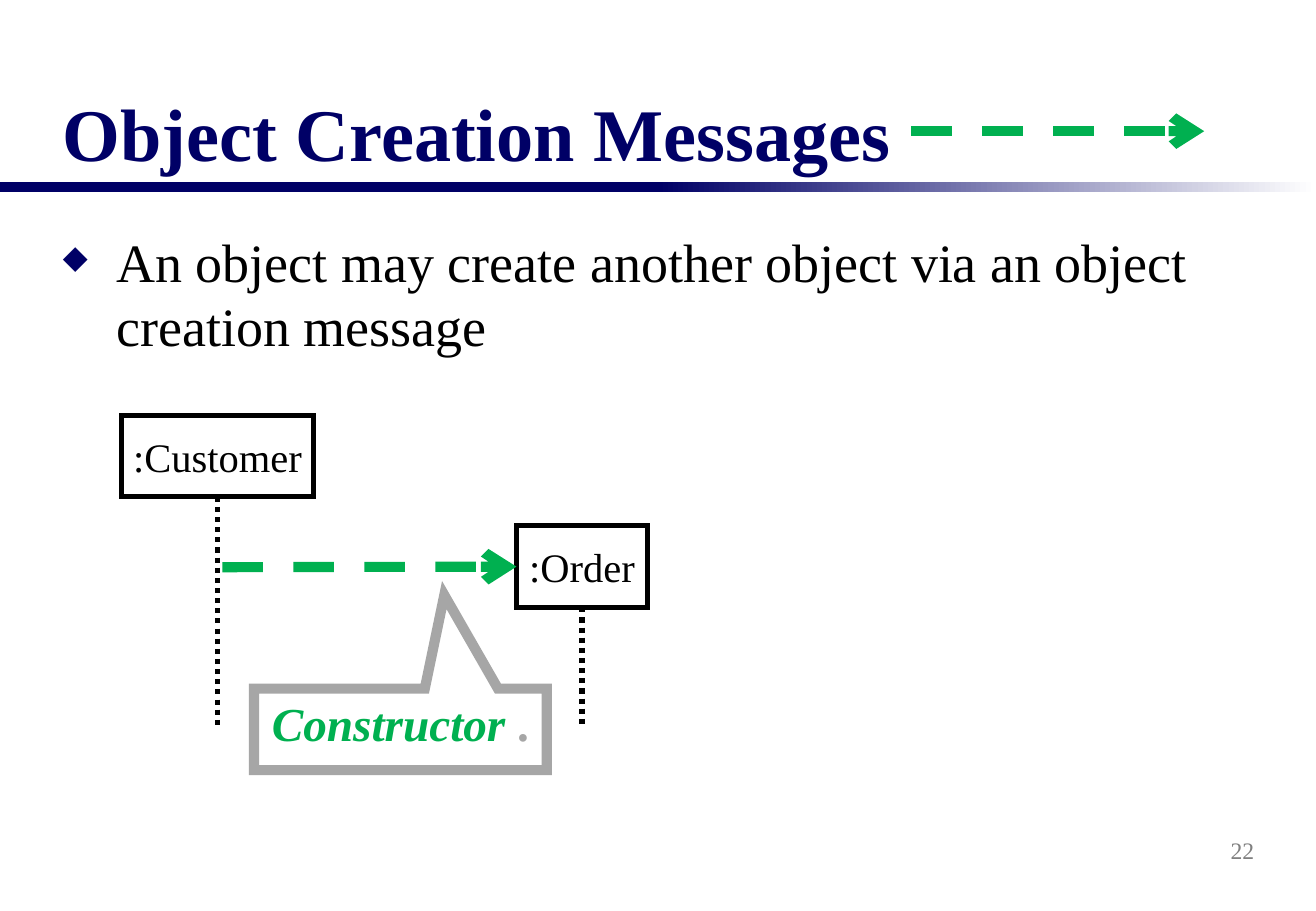
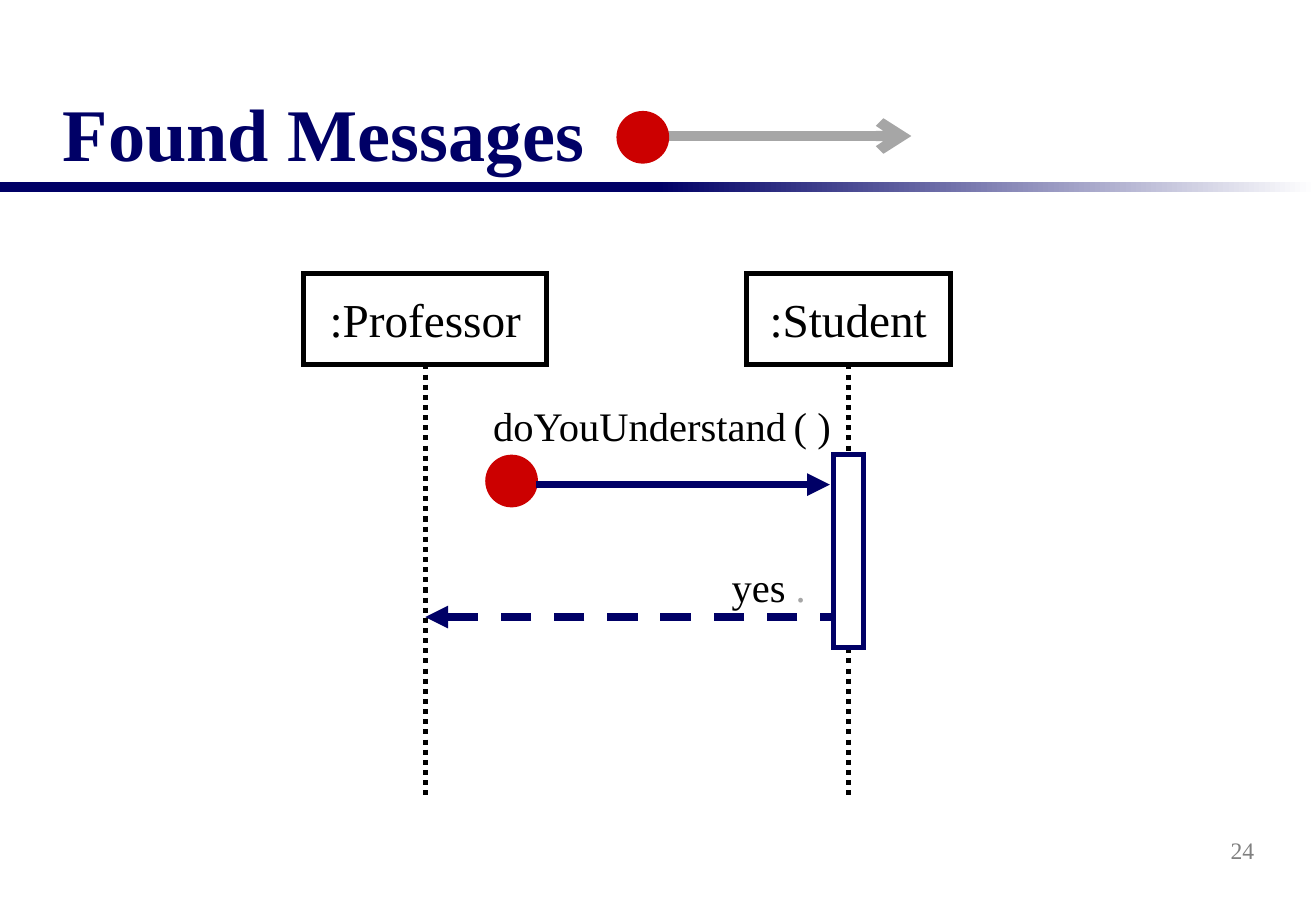
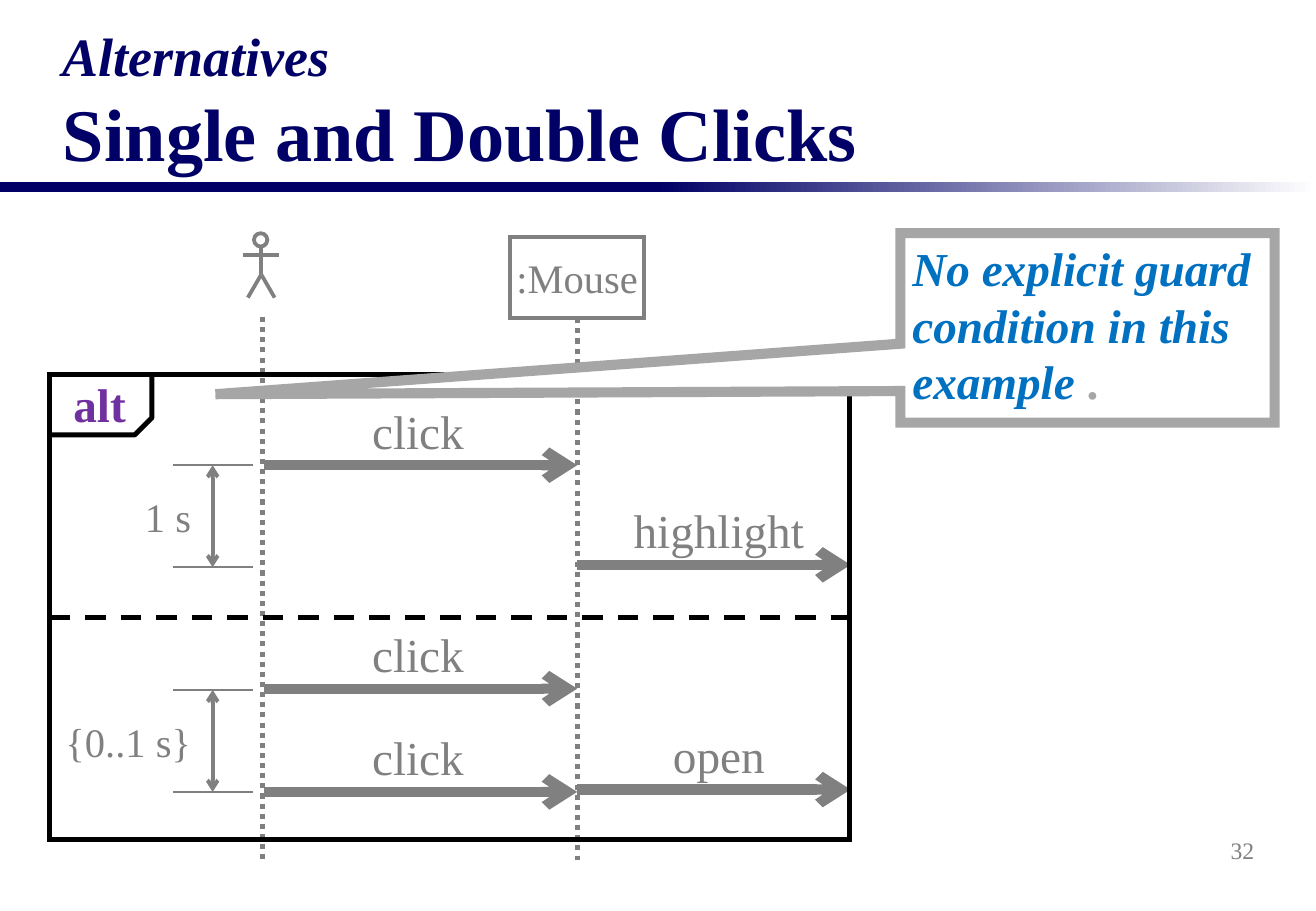
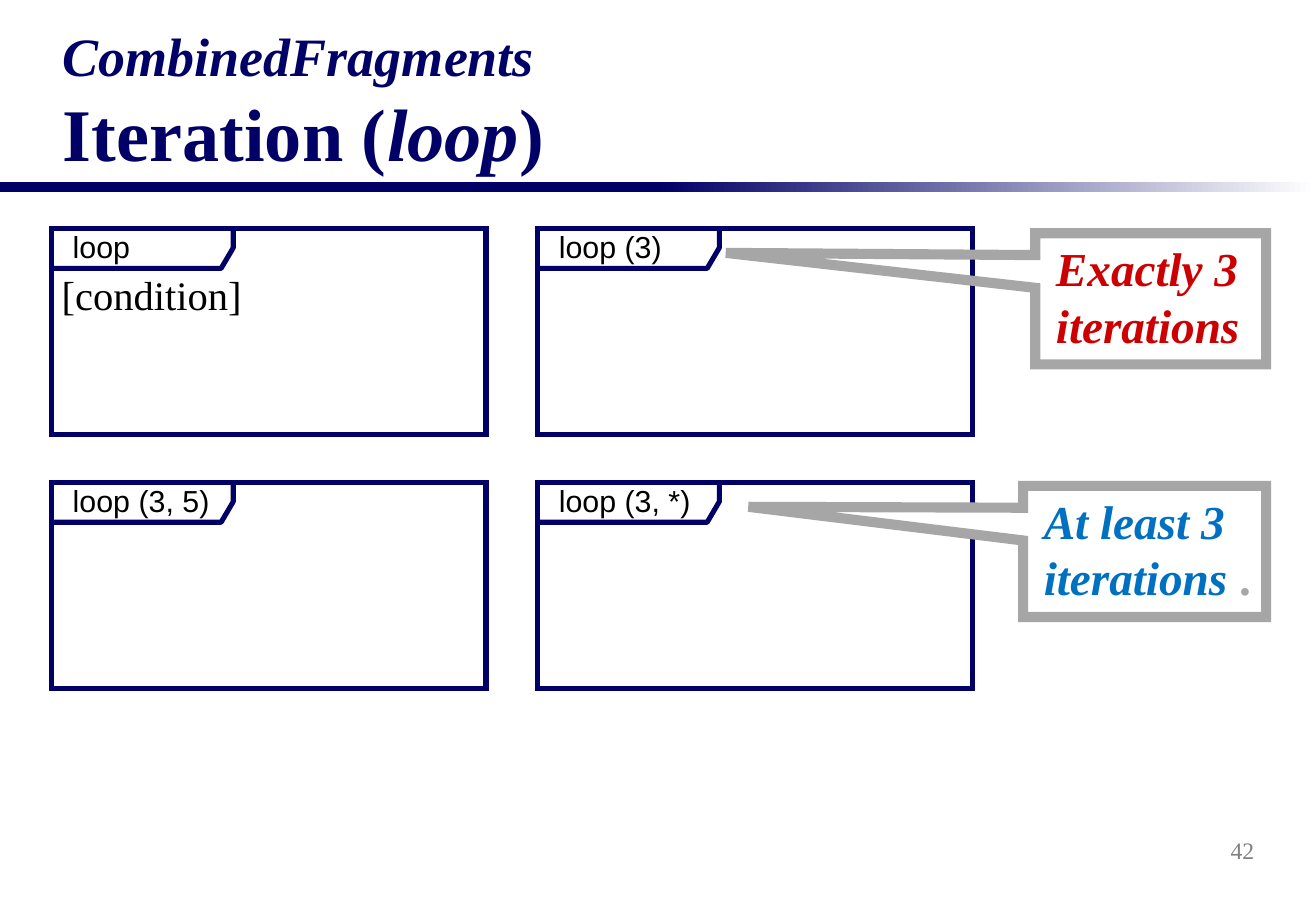
from lxml import etree
from pptx import Presentation
from pptx import util as u
from pptx.dml.color import RGBColor
from pptx.enum import dml, shapes, text
from pptx.oxml.ns import qn

PX = 9144
COLORS = {
    "navy": "000066",
    "black": "000000",
    "white": "FFFFFF",
    "gray": "808080",
    "silver": "A6A6A6",
    "green": "00B050",
    "red": "CC0000",
    "blue": "0070C0",
    "purple": "7030A0",
}
DASHES = {"dash": dml.MSO_LINE.DASH, "dots": dml.MSO_LINE.ROUND_DOT}
ALIGNS = {
    "left": text.PP_ALIGN.LEFT,
    "center": text.PP_ALIGN.CENTER,
    "right": text.PP_ALIGN.RIGHT,
}
ANCHORS = {
    "top": text.MSO_ANCHOR.TOP,
    "middle": text.MSO_ANCHOR.MIDDLE,
    "bottom": text.MSO_ANCHOR.BOTTOM,
}
BASE = {"name": "Times New Roman", "size": 24, "color": "black", "bold": False, "italic": False}
TITLE = {"size": 44, "color": "navy", "bold": True}
KICKER = {"size": 32, "italic": True}
REMARK = {"size": 28, "bold": True, "italic": True}
GRAY_DOT = (".", {"color": "silver", "italic": False})


def emu(*lengths):
    return [u.Emu(length * PX) for length in lengths]


def rgb(color):
    return RGBColor.from_string(COLORS[color])


def assign(target, values):
    for name, value in values.items():
        setattr(target, name, value)


def write(shape, runs, style=None, align="left", anchor="top", wrap=True, left_inset=10):
    frame = shape.text_frame
    inset, edge = emu(10, 5)
    assign(frame, {
        "word_wrap": wrap,
        "vertical_anchor": ANCHORS[anchor],
        "margin_left": emu(left_inset)[0],
        "margin_right": inset,
        "margin_top": edge,
        "margin_bottom": edge,
    })
    paragraph = frame.paragraphs[0]
    paragraph.alignment = ALIGNS[align]
    for content, changes in runs:
        if content == "\n":
            paragraph.add_line_break()
            continue
        run = paragraph.add_run()
        run.text = content
        values = {**BASE, **(style or {}), **changes}
        run.font.color.rgb = rgb(values.pop("color"))
        values["size"] = u.Pt(values["size"])
        assign(run.font, values)
    return paragraph


def label(slide, box, content, style=None, **layout):
    runs = [(content, {})] if isinstance(content, str) else content
    return write(slide.shapes.add_textbox(*emu(*box)), runs, style, **layout)


def outline(shape, fill=None, ink=None, weight=3, miter=True):
    shape.shadow.inherit = False
    if fill:
        shape.fill.solid()
        shape.fill.fore_color.rgb = rgb(fill)
    else:
        shape.fill.background()
    if not ink:
        shape.line.fill.background()
        return shape
    shape.line.color.rgb = rgb(ink)
    shape.line.width = u.Pt(weight)
    if miter:
        ln = shape._element.spPr.find(qn("a:ln"))
        etree.SubElement(ln, qn("a:miter")).set("lim", "800000")
    return shape


def draw(slide, kind, box, **look):
    return outline(slide.shapes.add_shape(kind, *emu(*box)), **look)


def rectangle(slide, box, **look):
    return draw(slide, shapes.MSO_SHAPE.RECTANGLE, box, **look)


def stroke(slide, start, end, ink, weight, dash=None, head=None, tail=None):
    connector = slide.shapes.add_connector(shapes.MSO_CONNECTOR.STRAIGHT, *emu(*start, *end))
    connector.line.color.rgb = rgb(ink)
    connector.line.width = u.Pt(weight)
    if dash:
        connector.line.dash_style = DASHES[dash]
    properties = connector._element.spPr
    ln = properties.find(qn("a:ln"))
    for tag, arrow in (("a:headEnd", head), ("a:tailEnd", tail)):
        if arrow:
            etree.SubElement(ln, qn(tag)).set("type", arrow)
    etree.SubElement(properties, qn("a:effectLst"))
    return connector


def base_slide(deck, title, number):
    slide = deck.slides.add_slide(deck.slide_layouts[6])
    rectangle(slide, (0, 150, 542, 8), fill="navy")
    fade = rectangle(slide, (541, 150, 542, 8), fill="navy")
    fade.fill.gradient()
    fade.fill.gradient_angle = 0
    for stop, position, color in zip(fade.fill.gradient_stops, (0, 1), ("navy", "white")):
        stop.position = position
        stop.color.rgb = rgb(color)
    label(slide, (42, 29, 1000, 121), title, TITLE, anchor="bottom")
    label(slide, (816, 675, 226, 50), str(number), {"size": 14, "color": "gray"},
          align="right", anchor="middle")
    return slide


def bullet_body(slide, box, content):
    paragraph = label(slide, box, content, {"size": 32})
    properties = paragraph._p.get_or_add_pPr()
    hanging = emu(44)[0]
    properties.set("marL", str(hanging))
    properties.set("indent", str(-hanging))
    color = etree.SubElement(properties, qn("a:buClr"))
    etree.SubElement(color, qn("a:srgbClr")).set("val", COLORS["navy"])
    etree.SubElement(properties, qn("a:buSzPct")).set("val", "60000")
    etree.SubElement(properties, qn("a:buChar")).set("char", "◆")


def participant(slide, box, name, bottom, size=24, ink="black", weight=3):
    left, top, width, height = box
    header = rectangle(slide, box, ink=ink, weight=weight)
    write(header, [(name, {})], {"size": size, "color": ink},
          align="center", anchor="middle", wrap=False)
    middle = left + width // 2
    lifeline = stroke(slide, (middle, top + height), (middle, bottom), ink, 3, "dots")
    lifeline.begin_connect(header, 2)
    return header


def callout(slide, box, runs, color, tip, fill="white", **layout):
    remark = draw(slide, shapes.MSO_SHAPE.RECTANGULAR_CALLOUT, box,
                  fill=fill, ink="silver", weight=6)
    for index, offset in enumerate(tip):
        remark.adjustments[index] = offset
    write(remark, runs, {**REMARK, "color": color}, **layout)


def found_dot(slide, left, top):
    draw(slide, shapes.MSO_SHAPE.OVAL, (left, top, 42, 42), fill="red", ink="red", weight=1)


def message(slide, box, name, shift):
    left, top, width, height = box
    bottom = top + height
    stroke(slide, (left, bottom), (left + width, bottom), "gray", 6, tail="arrow")
    label(slide, (left + shift, top, width, height), name,
          {"size": 28, "color": "gray"}, align="center")


def duration(slide, box, content):
    left, top, width, height = box
    middle = left + width // 2
    for y in (top, top + height):
        stroke(slide, (left, y), (left + width, y), "gray", 1)
    stroke(slide, (middle, top), (middle, top + height), "gray", 2.25,
           head="arrow", tail="arrow")
    label(slide, (left - 100, top + 17, 125, 50), content, {"color": "gray"}, align="right")


def actor(slide, box):
    left, top, width, height = box
    middle, right, foot = left + width // 2, left + width, top + height
    hip = top + 34
    limbs = [
        ((middle, hip), (middle, top + 3)),
        ((middle - 11, foot), (middle, hip)),
        ((middle + 11, foot), (middle, hip)),
        ((left, top + 18), (right, top + 18)),
    ]
    for start, end in limbs:
        stroke(slide, start, end, "gray", 2.25)
    draw(slide, shapes.MSO_SHAPE.OVAL, (middle - 6, top, 11, 11),
         fill="white", ink="gray", weight=2.25)


def fragment(slide, box, tab, cut, ink):
    left, top, _, _ = box
    width, height = tab
    rectangle(slide, box, ink=ink)
    right, bottom = left + width, top + height
    notch = slide.shapes.build_freeform(left, bottom, scale=PX)
    notch.add_line_segments(
        [(right - cut[0], bottom), (right, bottom - cut[1]), (right, top)], close=False)
    outline(notch.convert_to_shape(), ink=ink, miter=False)


def loop_fragment(slide, box, name):
    left, top, _, _ = box
    fragment(slide, box, (150, 33), (10, 17), "navy")
    label(slide, (left + 8, top - 5, 158, 40), name, {"name": "Arial", "size": 18})


def creation_slide(deck):
    slide = base_slide(deck, "Object Creation Messages", 22)
    bullet_body(slide, (42, 183, 1000, 133),
                "An object may create another object via an object creation message")
    callout(slide, (209, 567, 241, 67), [("Constructor ", {}), GRAY_DOT],
            "green", (0.15, -1.65), align="center")
    participant(slide, (100, 342, 158, 67), ":Customer", 600)
    order = participant(slide, (425, 433, 108, 67), ":Order", 600)
    create = stroke(slide, (183, 467), (425, 467), "green", 6, "dash", tail="arrow")
    create.end_connect(order, 1)
    stroke(slide, (750, 108), (991, 108), "green", 6, "dash", tail="arrow")


def found_slide(deck):
    slide = base_slide(deck, "Found Messages", 24)
    stroke(slide, (550, 112), (750, 112), "silver", 6, tail="arrow")
    found_dot(slide, 508, 92)
    stroke(slide, (700, 508), (350, 508), "navy", 4.5, "dash", tail="triangle")
    label(slide, (583, 458, 90, 60), [("yes ", {}), GRAY_DOT], align="right")
    participant(slide, (250, 225, 200, 75), ":Professor", 658, size=28)
    participant(slide, (614, 225, 168, 75), ":Student", 658, size=28)
    found_dot(slide, 400, 375)
    stroke(slide, (441, 399), (683, 399), "navy", 4.5, tail="triangle")
    label(slide, (396, 325, 312, 50),
          [("doYouUnderstand", {}), (" ", {"size": 18}), ("( )", {})])
    rectangle(slide, (686, 374, 25, 159), fill="white", ink="navy")


def alternatives_slide(deck):
    slide = base_slide(
        deck, [("Alternatives", KICKER), ("\n", {}), ("Single and Double Clicks", {})], 32)
    participant(slide, (420, 195, 110, 67), ":Mouse", 708, ink="gray", weight=2.25)
    stroke(slide, (216, 261), (216, 708), "gray", 3, "dots")
    actor(slide, (200, 192, 30, 53))
    for bottom in (383, 567, 652):
        message(slide, (217, bottom - 57, 258, 57), "click", -2)
    for bottom, name in ((465, "highlight"), (650, "open")):
        message(slide, (475, bottom - 57, 225, 57), name, 4)
    for top, content in ((383, "1 s"), (568, "{0..1 s}")):
        duration(slide, (142, top, 66, 84), content)
    fragment(slide, (41, 308, 658, 383), (84, 50), (14, 14), "black")
    stroke(slide, (41, 508), (700, 508), "black", 3, "dash")
    callout(slide, (741, 192, 308, 156),
            [("No explicit guard condition in this example ", {}), GRAY_DOT],
            "blue", (-2.33, 0.35))
    label(slide, (50, 304, 64, 57), "alt", {"size": 28, "color": "purple", "bold": True},
          align="center", wrap=False)


def iteration_slide(deck):
    slide = base_slide(
        deck,
        [("CombinedFragments", KICKER), ("\n", {}), ("Iteration (", {}),
         ("loop", {"italic": True}), (")", {})],
        42)
    names = (("loop", "loop (3)"), ("loop (3, 5)", "loop (3, *)"))
    for row, row_names in enumerate(names):
        for column, name in enumerate(row_names):
            loop_fragment(slide, (42 + 400 * column, 188 + 209 * row, 358, 170), name)
    callout(slide, (852, 192, 190, 108), [("Exactly 3 iterations", {})],
            "red", (-1.84, -0.35), fill=None, left_inset=17)
    callout(slide, (842, 400, 200, 108), [("At least 3 iterations ", {}), GRAY_DOT],
            "blue", (-1.63, -0.34), left_inset=17)
    label(slide, (41, 217, 170, 50), "[condition]", wrap=False)


def main():
    deck = Presentation()
    deck.slide_width, deck.slide_height = emu(1083, 750)
    for build in (creation_slide, found_slide, alternatives_slide, iteration_slide):
        build(deck)
    deck.save("out.pptx")


if __name__ == "__main__":
    main()
